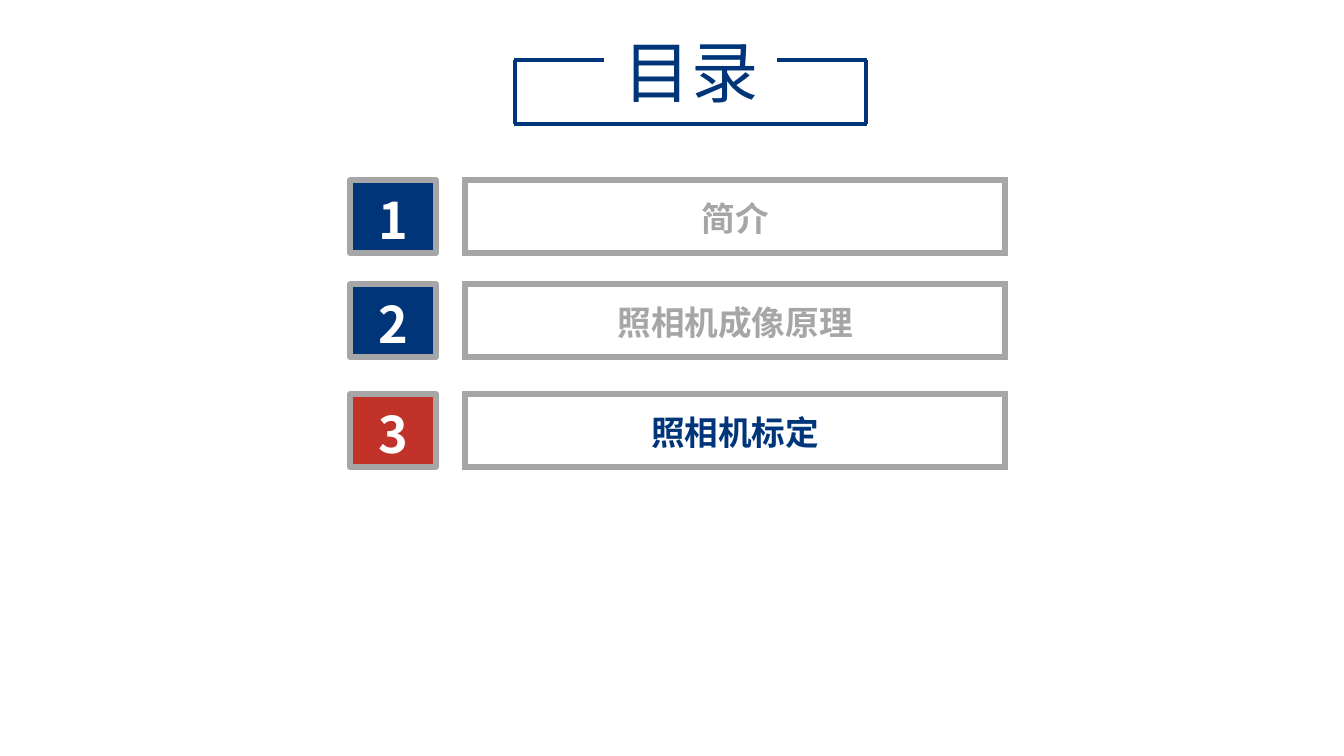
from lxml.etree import SubElement
from pptx import Presentation
from pptx.dml.color import RGBColor
from pptx.enum.shapes import MSO_CONNECTOR, MSO_SHAPE
from pptx.enum.text import MSO_ANCHOR, MSO_AUTO_SIZE, PP_ALIGN
from pptx.oxml.ns import qn
from pptx.util import Inches, Pt

PX = 914400 / 100.8
FONT = "Noto Sans CJK SC"
NAVY = RGBColor(0x00, 0x36, 0x79)
RED = RGBColor(0xC1, 0x32, 0x28)
GRAY = RGBColor(0xA6, 0xA6, 0xA6)
WHITE = RGBColor(0xFF, 0xFF, 0xFF)

CHAPTERS = [  # top, wording, badge colour, wording colour
    (180, "简介", NAVY, GRAY),
    (284, "照相机成像原理", NAVY, GRAY),
    (394, "照相机标定", RED, NAVY),
]


def px(*lengths):
    return [round(length * PX) for length in lengths]


def write(shape, text, size, color, bold=True, spacing=1.1):
    """Centre one line of text in the shape, in both directions."""
    frame = shape.text_frame
    frame.word_wrap = True
    frame.auto_size = MSO_AUTO_SIZE.NONE
    frame.vertical_anchor = MSO_ANCHOR.MIDDLE
    frame.margin_top = frame.margin_bottom = 0
    para = frame.paragraphs[0]
    para.text = text
    para.alignment = PP_ALIGN.CENTER
    para.line_spacing = spacing
    para.font.name = FONT
    para.font.size = Pt(size)
    para.font.bold = bold
    para.font.color.rgb = color
    # Chinese glyphs take their font from a:ea, which has no public setter
    defaults = para._p.pPr.find(qn("a:defRPr"))
    SubElement(defaults, qn("a:ea")).set("typeface", FONT)


def add_box(page, left, top, width, height, line_width, fill=None):
    box = page.shapes.add_shape(MSO_SHAPE.RECTANGLE, *px(left, top, width, height))
    box.shadow.inherit = False
    if fill is None:
        box.fill.background()
    else:
        box.fill.solid()
        box.fill.fore_color.rgb = fill
    box.line.color.rgb = GRAY
    box.line.width = Pt(line_width)
    return box


def add_line(page, *ends):
    line = page.shapes.add_connector(MSO_CONNECTOR.STRAIGHT, *px(*ends))
    line.line.color.rgb = NAVY
    line.line.width = Pt(3)
    SubElement(line._element.spPr, qn("a:effectLst"))


def add_heading(page, left, top, width, height):
    """Title inside a frame whose top edge is open in the middle."""
    right, bottom = left + width, top + height
    stub, inset = 90, 1
    title = page.shapes.title
    title.left, title.top, title.width, title.height = px(left + 74, top - 35, 206, 92)
    write(title, "目录", 48, NAVY, bold=False, spacing=1.0)
    add_line(page, right - stub, top, right, top)
    add_line(page, left, top, left + stub, top)
    add_line(page, left, bottom, right, bottom)
    for side in (left + inset, right - inset):
        add_line(page, side, top, side, bottom)


def add_chapter(page, left, top, number, wording, badge_color, text_color):
    height = 73
    badge = add_box(page, left, top, 86, height, 4, badge_color)
    write(badge, str(number), 36, WHITE)
    panel = add_box(page, left + 115, top, 540, height, 4.5)
    outline = panel._element.spPr.find(qn("a:ln"))
    SubElement(outline, qn("a:miter")).set("lim", "800000")
    write(panel, wording, 24, text_color)


def main():
    deck = Presentation()
    deck.slide_width, deck.slide_height = Inches(13.33), Inches(7.5)
    page = deck.slides.add_slide(deck.slide_layouts[5])
    add_heading(page, 514, 60, 353, 64)
    for number, (top, *details) in enumerate(CHAPTERS, start=1):
        add_chapter(page, 350, top, number, *details)
    deck.save("out.pptx")


if __name__ == "__main__":
    main()
